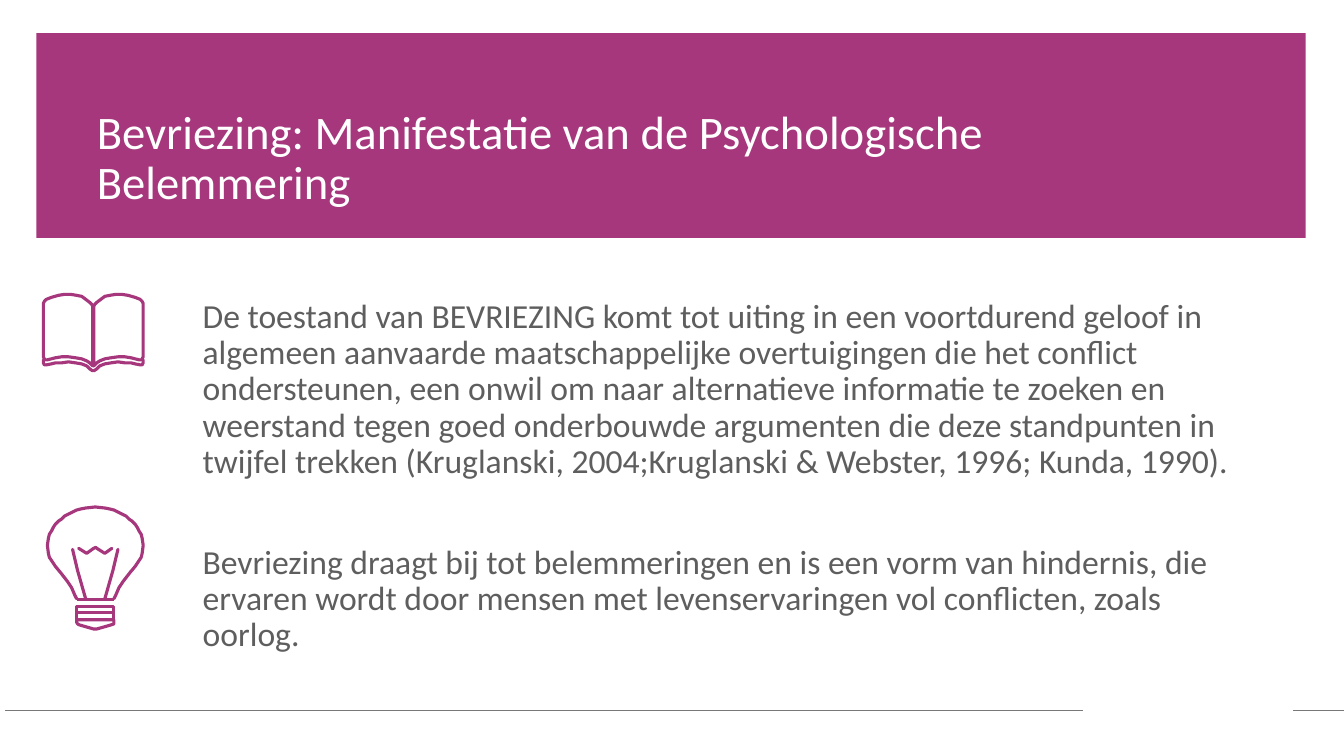
from lxml.etree import SubElement
from pptx import Presentation
from pptx.dml.color import RGBColor
from pptx.enum.shapes import MSO_CONNECTOR, MSO_SHAPE
from pptx.enum.text import MSO_ANCHOR, MSO_AUTO_SIZE, PP_ALIGN
from pptx.oxml.ns import qn
from pptx.util import Pt

PX = 9144  # EMU per px, 100 px to the inch
PURPLE, WHITE, TEXT_GREY, RULE_GREY = "A6377D", "FFFFFF", "5E5E5E", "797979"


def paint(target, colour):
    """Give a fill, line fill or font fill one solid colour."""
    target.solid()
    target.fore_color.rgb = RGBColor.from_string(colour)


deck = Presentation()
deck.slide_width, deck.slide_height = 1333 * PX, 750 * PX
page = deck.slides.add_slide(deck.slide_layouts[1])
shapes = page.shapes

# Banner, placed behind the title
banner = shapes.add_shape(MSO_SHAPE.RECTANGLE, 36 * PX, 33 * PX, 1259 * PX, 203 * PX)
banner.shadow.inherit = False
paint(banner.fill, PURPLE)
banner.line.fill.background()
shapes._spTree.insert(2, banner._element)

# Title and body text: placeholder, place, size, colour, paragraphs with space before
texts = [
    (shapes.title, (86, 103, 1155, 76), 33.3, WHITE,
     [("Bevriezing: Manifestatie van de Psychologische Belemmering", 0)]),
    (page.placeholders[1], (191, 292, 1050, 355), 24, TEXT_GREY,
     [("De toestand van BEVRIEZING komt tot uiting in een voortdurend geloof in "
       "algemeen aanvaarde maatschappelijke overtuigingen die het conflict "
       "ondersteunen, een onwil om naar alternatieve informatie te zoeken en "
       "weerstand tegen goed onderbouwde argumenten die deze standpunten in "
       "twijfel trekken (Kruglanski, 2004;Kruglanski & Webster, 1996; Kunda, 1990).", 0),
      ("Bevriezing draagt bij tot belemmeringen en is een vorm van hindernis, die "
       "ervaren wordt door mensen met levenservaringen vol conflicten, zoals oorlog.", 46)]),
]
for box, place, size, colour, paragraphs in texts:
    box.left, box.top, box.width, box.height = [PX * value for value in place]
    frame = box.text_frame
    frame.word_wrap = True
    frame.auto_size = MSO_AUTO_SIZE.NONE
    frame.vertical_anchor = MSO_ANCHOR.TOP
    for number, (words, gap) in enumerate(paragraphs):
        para = frame.add_paragraph() if number else frame.paragraphs[0]
        para.alignment = PP_ALIGN.LEFT
        para.line_spacing = 0.9
        para.space_before = Pt(gap)
        properties = para._p.get_or_add_pPr()
        properties.set("marL", "0")
        properties.set("indent", "0")
        SubElement(properties, qn("a:buNone"))
        span = para.add_run()
        span.text = words
        span.font.name = "Calibri"
        span.font.size = Pt(size)
        paint(span.font.fill, colour)

# Book: the right half is the left half mirrored about the spine
page_edge = [
    (43, 357), (43, 360), (44, 362), (46, 362), (51, 361), (55, 360), (61, 360),
    (68, 359), (75, 360), (81, 361), (86, 363), (89, 366), (92, 368)]
book_page = [
    (92, 304), (92, 363), (89, 360), (86, 358), (81, 356), (75, 355), (68, 354),
    (61, 354), (55, 355), (51, 356), (47, 357), (45, 357), (44, 356), (43, 354),
    (43, 301), (44, 299), (46, 297), (51, 295), (58, 293), (64, 292), (70, 292),
    (76, 293), (81, 294), (85, 297), (89, 300), (91, 302)]
outlines = []
for points, closed in [(page_edge, False), (book_page, True)]:
    outlines.append((points, closed))
    outlines.append(([(185 - x, y) for x, y in points], closed))

# Light bulb: glass and filament legs are symmetric too
glass_right = [
    (113, 594), (115, 590), (118, 583), (122, 577), (129, 568), (134, 562),
    (138, 556), (140, 553), (141, 549), (142, 541), (141, 534), (140, 530),
    (138, 527), (136, 523), (134, 520), (131, 517), (128, 515), (125, 512),
    (121, 510), (117, 508), (113, 506), (109, 505), (104, 504), (95, 503)]
glass_left = [(189 - x, y) for x, y in reversed(glass_right)]
leg = [(85, 594), (77, 566), (72, 545)]
filament = [(78, 544), (86, 549), (93, 544), (95, 543), (96, 544), (104, 549), (111, 544)]
cap = [
    (76, 615), (76, 617), (77, 619), (79, 620), (93, 624), (96, 624),
    (110, 620), (113, 619), (113, 615)]
outlines += [
    (glass_right + glass_left, False),
    (leg, False),
    ([(189 - x, y) for x, y in leg], False),
    (filament, False),
    (cap, True)]
for top, bottom in [(602, 608), (608, 615)]:
    outlines.append(([(76, top), (113, top), (113, bottom), (76, bottom)], True))

for points, closed in outlines:
    builder = shapes.build_freeform(*points[0], scale=PX)
    builder.add_line_segments(points[1:], close=closed)
    stroke = builder.convert_to_shape()
    stroke.shadow.inherit = False
    stroke.fill.background()
    paint(stroke.line.fill, PURPLE)
    stroke.line.width = Pt(2.25)
    line_xml = stroke.line._get_or_add_ln()
    line_xml.set("cap", "rnd")
    SubElement(line_xml, qn("a:round"))

# Straight lines: two parts of the footer rule, and the base of the glass
for start, end, y, colour, weight in [
        (1074, 5, 705, RULE_GREY, 0.5),
        (1333, 1282, 705, RULE_GREY, 0.5),
        (76, 113, 595, PURPLE, 2.25)]:
    rule = shapes.add_connector(MSO_CONNECTOR.STRAIGHT, start * PX, y * PX, end * PX, y * PX)
    paint(rule.line.fill, colour)
    rule.line.width = Pt(weight)
    SubElement(rule._element.spPr, qn("a:effectLst"))

deck.save("out.pptx")
